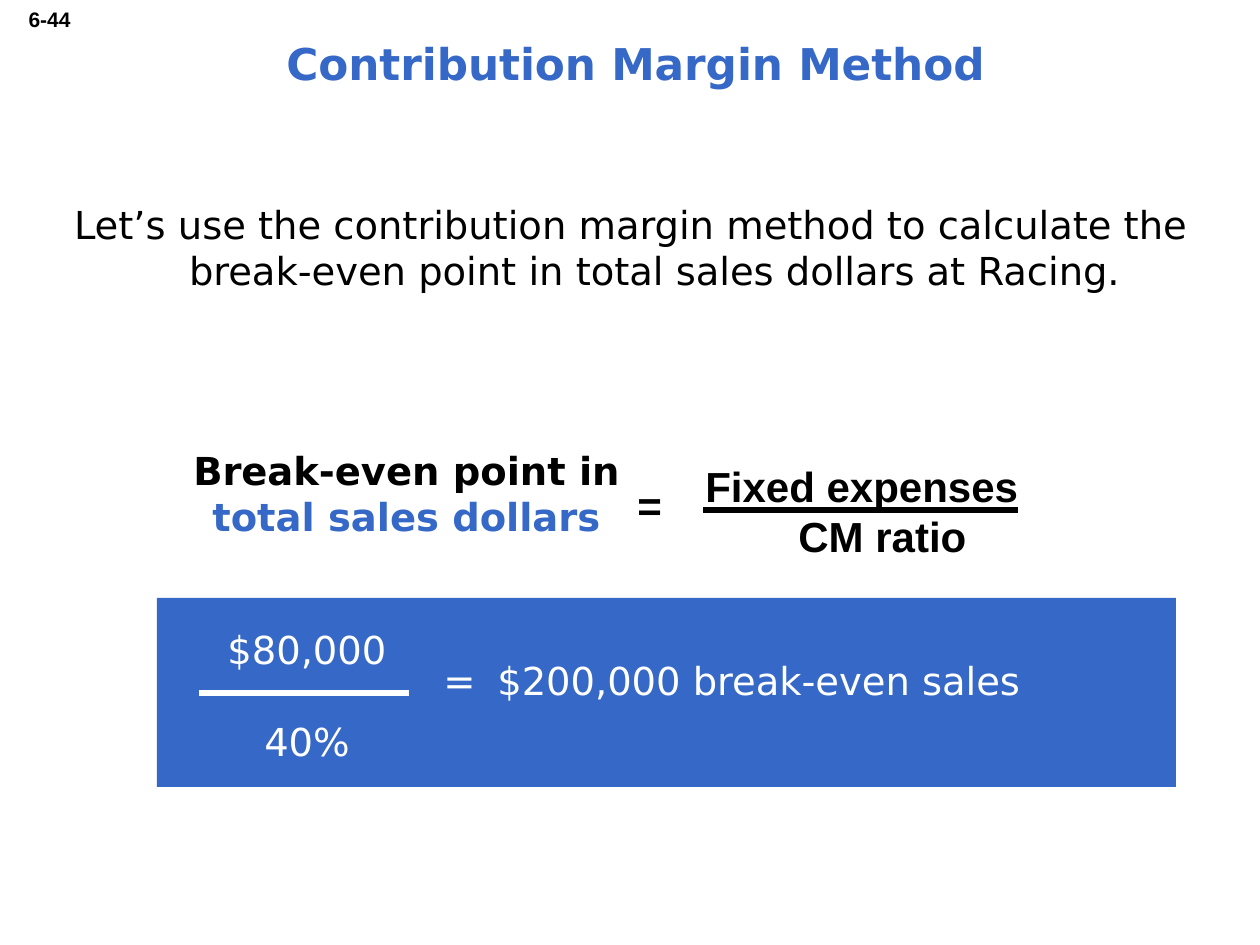
from lxml import etree
from pptx import Presentation
from pptx.dml.color import RGBColor
from pptx.enum.shapes import MSO_CONNECTOR, MSO_SHAPE
from pptx.enum.text import MSO_ANCHOR, PP_ALIGN
from pptx.oxml.ns import qn
from pptx.util import Pt

LEFT, CENTER, RIGHT = PP_ALIGN.LEFT, PP_ALIGN.CENTER, PP_ALIGN.RIGHT
TOP, MIDDLE = MSO_ANCHOR.TOP, MSO_ANCHOR.MIDDLE
STRAIGHT, RECTANGLE = MSO_CONNECTOR.STRAIGHT, MSO_SHAPE.RECTANGLE

PX_PER_INCH = 126
COLORS = {"black": "000000", "blue": "3568C7", "white": "FFFFFF"}
SANS, ARIAL = "DejaVu Sans", "Arial"


def px(length):
    return round(length * 914400 / PX_PER_INCH)


def rgb(name):
    return RGBColor.from_string(COLORS[name])


class SlideBuilder:
    def __init__(self, slide):
        self.slide = slide
        self.shapes = slide.shapes

    def start_group(self):
        self.shapes = self.slide.shapes.add_group_shape().shapes

    def text(self, box, lines, size=22, font=SANS, colors=("black",), bold=False,
             align=LEFT, anchor=TOP, wrap=False, gap=0):
        shape = self.shapes.add_textbox(*map(px, box))
        text_frame = shape.text_frame
        text_frame.text = "\n".join(lines)
        text_frame.word_wrap = wrap
        text_frame.vertical_anchor = anchor
        for index, paragraph in enumerate(text_frame.paragraphs):
            paragraph.alignment = align
            if index:
                paragraph.space_before = Pt(gap)
            for run in paragraph.runs:
                run.font.name = font
                run.font.size = Pt(size)
                run.font.bold = bold
                run.font.color.rgb = rgb(colors[index % len(colors)])
        return text_frame.paragraphs

    def indent(self, paragraph, margin, first=0):
        properties = paragraph._p.get_or_add_pPr()
        properties.set("marL", str(px(margin)))
        properties.set("indent", str(px(first)))

    def panel(self, box, color):
        shape = self.shapes.add_shape(RECTANGLE, *map(px, box))
        shape.shadow.inherit = False
        shape.fill.solid()
        shape.fill.fore_color.rgb = rgb(color)
        shape.line.fill.background()

    def fraction_bar(self, left, right, y, color):
        connector = self.shapes.add_connector(STRAIGHT, px(left), px(y), px(right), px(y))
        connector.line.color.rgb = rgb(color)
        connector.line.width = Pt(3)
        etree.SubElement(connector._element.spPr, qn("a:effectLst"))


def main():
    presentation = Presentation()
    presentation.slide_width = px(1260)
    presentation.slide_height = px(945)
    builder = SlideBuilder(presentation.slides.add_slide(presentation.slide_layouts[6]))

    builder.text((14, 0, 69, 38), ["6-44"], 12, ARIAL, bold=True, align=RIGHT)
    builder.text((21, 10, 1229, 105), ["Contribution Margin Method"], 25,
                 colors=("blue",), bold=True, align=CENTER, anchor=MIDDLE, wrap=True)
    body = builder.text((32, 195, 1197, 120),
                        ["Let’s use the contribution margin method to calculate the "
                         "break-even point in total sales dollars at Racing."],
                        align=CENTER, wrap=True)
    builder.indent(body[0], 48, -48)

    builder.start_group()
    ratio = builder.text((693, 454, 350, 115), ["Fixed expenses", "CM ratio"], 24, ARIAL,
                         bold=True, wrap=True)
    builder.indent(ratio[1], 93)
    builder.text((625, 473, 50, 63), ["="], 24, ARIAL, bold=True)
    builder.text((179, 441, 455, 106), ["Break-even point in", "total sales dollars"],
                 colors=("black", "blue"), bold=True, align=CENTER)
    builder.fraction_bar(703, 1018, 510, "black")

    builder.start_group()
    builder.panel((157, 598, 1019, 189), "blue")
    builder.text((213, 620, 188, 152), ["$80,000", "40%"], colors=("white",),
                 align=CENTER, gap=26)
    result = builder.text((431, 651, 640, 59), ["=\t$200,000 break-even sales"],
                          colors=("white",), wrap=True)
    builder.indent(result[0], 54, -54)
    builder.fraction_bar(199, 409, 693, "white")

    presentation.save("out.pptx")


if __name__ == "__main__":
    main()
